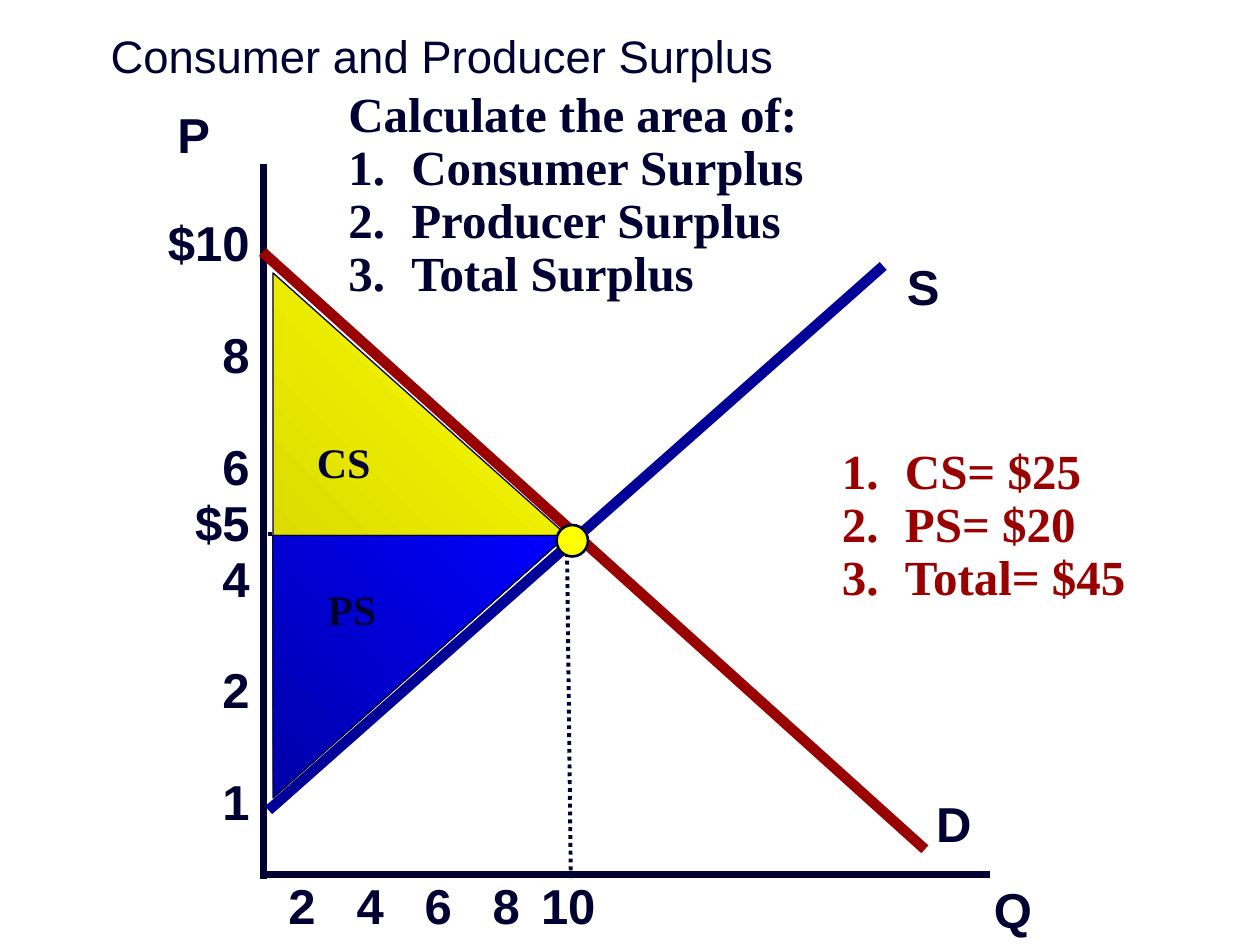
from lxml import etree
from pptx import Presentation
from pptx import util as u
from pptx.dml.color import RGBColor
from pptx.enum import dml, shapes, text
from pptx.oxml import ns

INK, RED, NAVY, YELLOW = "000032", "990000", "000099", "FFFF00"
SANS, SERIF = "Arial", "Times New Roman"
LEFT, CENTER, RIGHT = text.PP_ALIGN.LEFT, text.PP_ALIGN.CENTER, text.PP_ALIGN.RIGHT


def color(value):
    return RGBColor.from_string(value)


class SurplusSlide:
    """Draws supply and demand elements on one slide, with lengths in points."""

    def __init__(self, slide):
        self.slide = slide

    def line(self, start, end, ink, width, dotted=False):
        ends = [u.Pt(value) for value in (*start, *end)]
        connector = self.slide.shapes.add_connector(shapes.MSO_CONNECTOR.STRAIGHT, *ends)
        connector.line.color.rgb = color(ink)
        connector.line.width = u.Pt(width)
        if dotted:
            connector.line.dash_style = dml.MSO_LINE.ROUND_DOT
        etree.SubElement(connector._element.spPr, ns.qn("a:effectLst"))

    def outline(self, shape, width):
        shape.shadow.inherit = False
        shape.line.color.rgb = color(INK)
        shape.line.width = u.Pt(width)

    def area(self, corners, dark, bright):
        points = [(u.Pt(x), u.Pt(y)) for x, y in corners]
        builder = self.slide.shapes.build_freeform(*points[0])
        builder.add_line_segments(points[1:], close=True)
        shape = builder.convert_to_shape()
        shape.fill.gradient()
        shape.fill.gradient_angle = 45
        for stop, position, shade in zip(shape.fill.gradient_stops, (0, 1), (dark, bright)):
            stop.position = position
            stop.color.rgb = color(shade)
        self.outline(shape, 0.75)

    def dot(self, left, top, size):
        box = [u.Pt(value) for value in (left, top, size, size)]
        shape = self.slide.shapes.add_shape(shapes.MSO_SHAPE.OVAL, *box)
        shape.fill.solid()
        shape.fill.fore_color.rgb = color(YELLOW)
        self.outline(shape, 1.5)

    def label(self, box, lines, size=28, font=SANS, ink=INK, bold=True, align=LEFT,
              spacing=None, wrap=True, gaps=None, numbered_from=None):
        shape = self.slide.shapes.add_textbox(*[u.Pt(value) for value in box])
        frame = shape.text_frame
        frame.word_wrap = wrap
        frame.auto_size = text.MSO_AUTO_SIZE.SHAPE_TO_FIT_TEXT
        for index, words in enumerate(lines):
            paragraph = frame.add_paragraph() if index else frame.paragraphs[0]
            paragraph.alignment = align
            if spacing:
                paragraph.line_spacing = spacing
            if gaps and gaps[index]:
                paragraph.space_before = u.Pt(gaps[index])
            if numbered_from is not None:
                self.number(paragraph, index >= numbered_from)
            run = paragraph.add_run()
            run.text = words
            run.font.name = font
            run.font.size = u.Pt(size)
            run.font.bold = bold
            run.font.color.rgb = color(ink)

    def number(self, paragraph, shown):
        properties = paragraph._p.get_or_add_pPr()
        properties.set("marL", str(u.Pt(36)))
        properties.set("indent", str(-u.Pt(36)))
        if shown:
            etree.SubElement(properties, ns.qn("a:buAutoNum"), type="arabicPeriod")


def main():
    presentation = Presentation()
    presentation.slide_width, presentation.slide_height = u.Pt(720), u.Pt(540)
    slide = SurplusSlide(presentation.slides.add_slide(presentation.slide_layouts[6]))

    slide.line((150.5, 93.6), (150.5, 502.5), INK, 4)
    slide.line((148.5, 499.7), (566, 499.7), INK, 4)
    slide.line((150, 144), (528.5, 485.3), RED, 6)
    slide.line((153.5, 463), (504.7, 152), NAVY, 6)

    names = {"S": (511.2, 143.3, 33), "P": (94.3, 56.2, 33),
             "Q": (560.9, 499, 36), "D": (527.8, 450, 34.5)}
    for name, (left, top, width) in names.items():
        slide.label((left, top, width, 41), [name], wrap=False)
    slide.label((54, 18.7, 397.5, 32.4), ["Consumer and Producer Surplus"],
                size=26, bold=False, align=CENTER, spacing=0.8, wrap=False)

    row = 31.9
    slide.label((66.2, 120.5, 83.5, 359), ["$10", "8", "6", "$5", "4", "2", "1"],
                align=RIGHT, spacing=0.95, gaps=[0, row, row, 0, 0, row, row])
    quantities = [(str(2 * step), 133.7 + 38.9 * step) for step in range(1, 5)]
    for quantity, middle in quantities + [("10", 324.7)]:
        slide.label((middle - 23, 496.8, 46, 41), [quantity], align=CENTER, wrap=False)

    slide.line((326.2, 501.8), (324, 311.8), INK, 2.25, dotted=True)
    slide.line((153.4, 305.3), (316.8, 305.3), INK, 2.25, dotted=True)

    balance, price = (324, 306), (156, 306)
    slide.area([(156, 156), balance, price], "DCDC00", YELLOW)
    slide.label((174, 246, 66, 36), ["CS"], size=24, font=SERIF)
    slide.area([balance, price, (156, 456)], "0000A9", "0000FF")
    slide.label((180, 330, 66, 36), ["PS"], size=24, font=SERIF)
    slide.dot(318, 300, 18)

    slide.label((192, 48, 300, 128),
                ["Calculate the area of:", "Consumer Surplus", "Producer Surplus", "Total Surplus"],
                font=SERIF, spacing=0.9, numbered_from=1)
    slide.label((474, 252, 204, 98), ["CS= $25", "PS= $20", "Total= $45"],
                font=SERIF, ink=RED, spacing=0.9, numbered_from=0)

    presentation.save("out.pptx")


if __name__ == "__main__":
    main()
